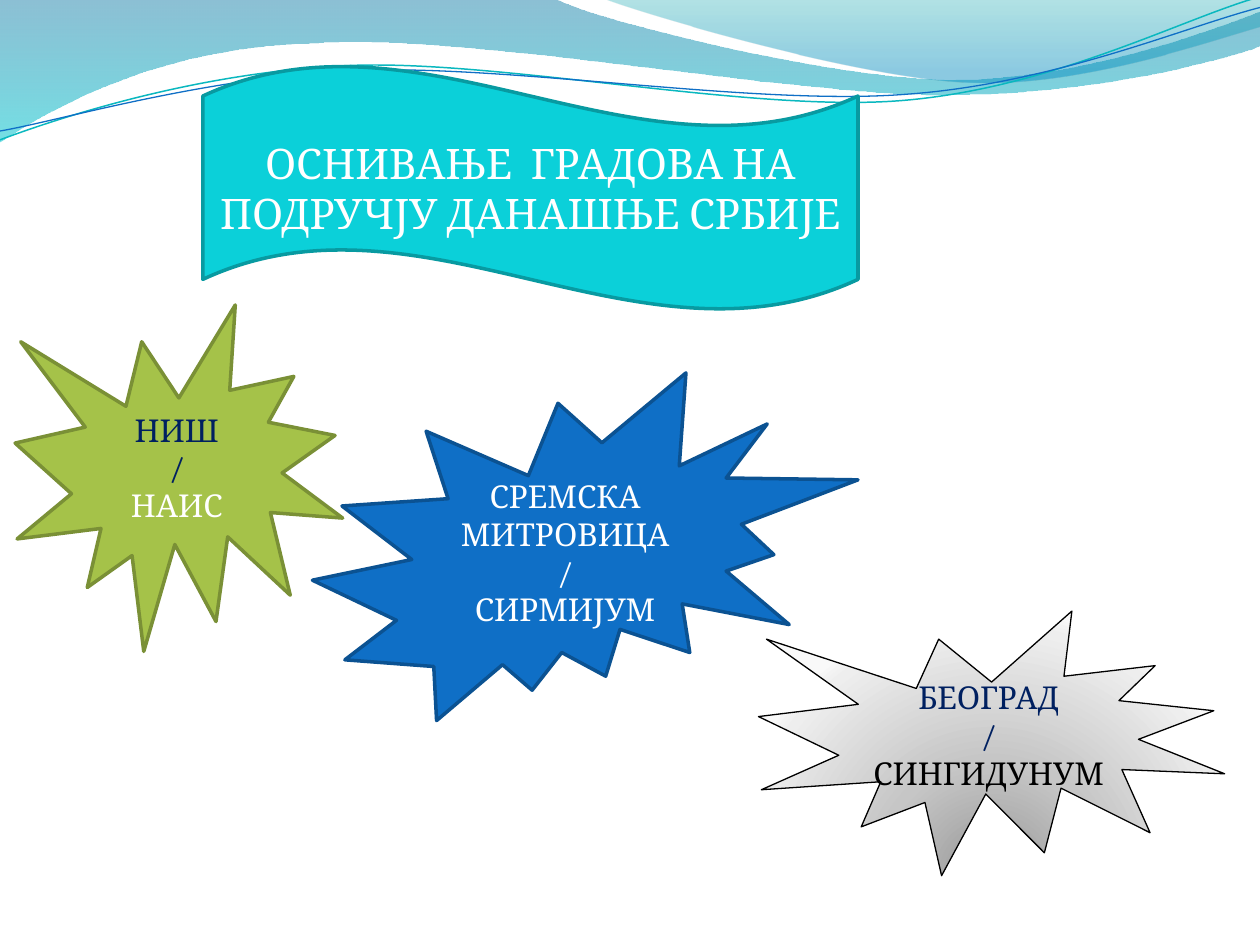
import math

import pptx
import pptx.dml.color
import pptx.enum.shapes
import pptx.enum.text
import pptx.oxml
import pptx.oxml.ns
import pptx.util

Inches = pptx.util.Inches
KIND = pptx.enum.shapes.MSO_SHAPE
NS = pptx.oxml.ns.nsdecls("a")
qn = pptx.oxml.ns.qn

# Each outline: a start point, then (x, y) lines or six-number Bezier curves.
BAND = [(0, 0), (4.4, -0.01), (4.76, 0.17, 6.64, 0.63, 7.58, 0.63),
        (8.53, 0.63, 9.58, 0.26, 10, 0.09), (10.01, 0.36),
        (9.83, 0.44, 8.7, 0.76, 7.46, 0.75),
        (6.22, 0.75, 3.82, 0.28, 2.57, 0.34),
        (1.29, 0.36, 0.46, 0.83, -0.01, 1.13)]
CREST = [(4.79, -0.01), (5.09, 0.11, 6.82, 0.62, 7.69, 0.65),
         (8.56, 0.69, 9.61, 0.32, 10, 0.21), (10, 0)]
TEAL = [(0, 1.11), (0.48, 0.93, 1.58, 0.57, 2.77, 0.52),
        (3.95, 0.47, 5.93, 0.89, 7.13, 0.8),
        (8.33, 0.71, 9.38, 0.15, 9.98, -0.02)]
BLUE = [(0, 1.04), (0.47, 0.96, 1.64, 0.61, 2.83, 0.56),
        (4.03, 0.51, 5.97, 0.84, 7.17, 0.75),
        (8.36, 0.67, 9.41, 0.21, 10, 0.06)]
TILT = 2.7
DOWN = '<a:lin ang="5400000" scaled="0"/>'
GLOW = ('<a:path path="circle"><a:fillToRect l="50000" t="130000" '
        'r="50000" b="-30000"/></a:path>')


def color(code):
    return pptx.dml.color.RGBColor.from_string(code)


def blend(shape, stops, mode):
    """Fill with a gradient; stops are (position, colour, opacity) in percent."""
    marks = "".join(
        f'<a:gs pos="{pos * 1000}"><a:srgbClr val="{code}">'
        f'<a:alpha val="{alpha * 1000}"/></a:srgbClr></a:gs>'
        for pos, code, alpha in stops)
    shape.fill.background()
    props = shape._element.spPr
    props.replace(props.find(qn("a:noFill")), pptx.oxml.parse_xml(
        f'<a:gradFill {NS} rotWithShape="1"><a:gsLst>{marks}</a:gsLst>'
        f'{mode}</a:gradFill>'))


def stroke(shape, code, width):
    shape.line.color.rgb = color(code)
    shape.line.width = pptx.util.Pt(width)


def turn(step, mid):
    """Rotate the points of a step clockwise by TILT about mid."""
    cos, sin = math.cos(math.radians(TILT)), math.sin(math.radians(TILT))
    points = []
    for x, y in zip(step[::2], step[1::2]):
        x, y = x - mid[0], y - mid[1]
        points += [mid[0] + x * cos - y * sin, mid[1] + x * sin + y * cos]
    return points


def curve(slide, steps, close):
    """Build a freeform, then join the points of each curve as a Bezier."""
    points = [(Inches(x), Inches(y)) for step in steps
              for x, y in zip(step[::2], step[1::2])]
    pen = slide.shapes.build_freeform(*points[0])
    pen.add_line_segments(points[1:], close=close)
    shape = pen.convert_to_shape()
    shape.shadow.inherit = False
    lines = iter(list(shape._element.iter(qn("a:lnTo"))))
    for step in steps[1:]:
        line = next(lines)
        if len(step) == 6:
            bend = pptx.oxml.parse_xml(f"<a:cubicBezTo {NS}/>")
            line.addprevious(bend)
            for part in (line, next(lines), next(lines)):
                bend.append(part[0])
                part.getparent().remove(part)
    return shape


def swell(slide, steps, stops):
    shape = curve(slide, steps, True)
    blend(shape, stops, DOWN)
    shape.line.fill.background()


def strand(slide, steps, mid, code, width):
    shape = curve(slide, [turn(step, mid) for step in steps], False)
    shape.rotation = -TILT
    shape.fill.background()
    stroke(shape, code, width)


def label(slide, kind, box, fill, line, size, texts):
    """Add a shape with centred lines; texts are (wording, colour)."""
    shape = slide.shapes.add_shape(kind, *map(Inches, box))
    shape.shadow.inherit = False
    if fill:
        shape.fill.solid()
        shape.fill.fore_color.rgb = color(fill)
    stroke(shape, *line)
    frame = shape.text_frame
    frame.word_wrap = True
    frame.vertical_anchor = pptx.enum.text.MSO_ANCHOR.MIDDLE
    style = {"name": "Cambria", "size": pptx.util.Pt(size)}
    for i, (text, code) in enumerate(texts):
        para = frame.add_paragraph() if i else frame.paragraphs[0]
        para.alignment = pptx.enum.text.PP_ALIGN.CENTER
        run = para.add_run()
        run.text = text
        for key, value in style.items():
            setattr(run.font, key, value)
        run.font.color.rgb = color(code)
    return shape


def main():
    deck = pptx.Presentation()
    deck.slide_width, deck.slide_height = Inches(10), Inches(7.5)
    slide = deck.slides.add_slide(deck.slide_layouts[6])

    swell(slide, BAND, [(0, "0074A1", 45), (100, "00C6CF", 55)])
    swell(slide, CREST, [(0, "00A1A9", 30), (80, "008BBF", 45)])
    strand(slide, TEAL, (4.99, 0.58), "0AB8BF", 0.85)
    strand(slide, BLUE, (5, 0.59), "0F6FC6", 0.75)

    white, navy, black = "FFFFFF", "002060", "000000"
    label(slide, KIND.WAVE, (1.61, 0.52, 5.2, 1.94), "0BD0D9", ("089AA1", 2),
          24, [("ОСНИВАЊЕ  ГРАДОВА НА ПОДРУЧЈУ ДАНАШЊЕ СРБИЈЕ", white)])
    label(slide, KIND.EXPLOSION1, (0.12, 2.42, 2.6, 2.75), "A5C249",
          ("7A9036", 2), 18, [("НИШ", navy), ("/", navy), ("НАИС", white)])
    label(slide, KIND.EXPLOSION2, (2.48, 2.96, 4.33, 2.76), "0F6FC6",
          ("0B5292", 2), 18,
          [("СРЕМСКА МИТРОВИЦА", white), ("/", white), ("СИРМИЈУМ", white)])
    city = label(slide, KIND.EXPLOSION1, (6.02, 4.85, 3.7, 2.1), None,
                 (black, 0.75), 18,
                 [("БЕОГРАД", navy), ("/", navy), ("СИНГИДУНУМ", black)])
    blend(city, [(0, "979797", 100), (43, "C6C6C6", 100),
                 (93, "EEEEEE", 100), (100, "F9F9F9", 100)], GLOW)

    deck.save("out.pptx")


if __name__ == "__main__":
    main()
